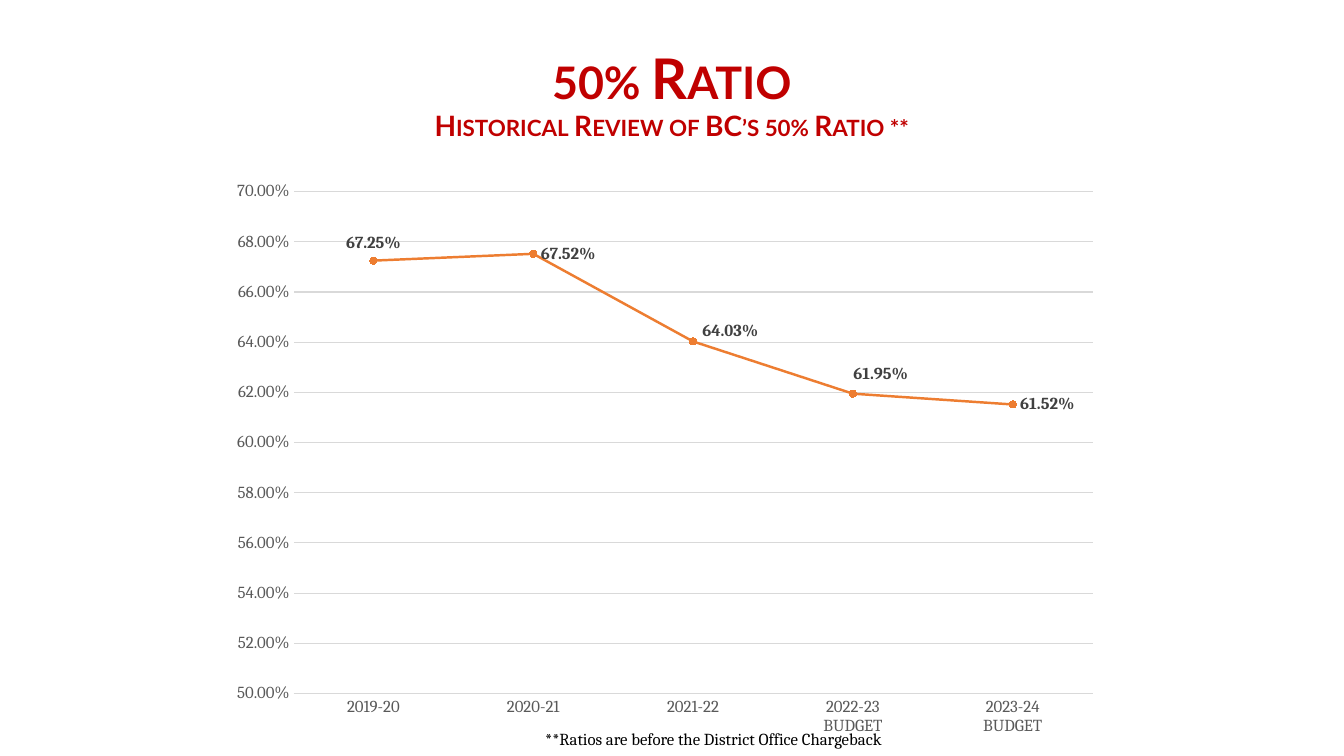
from lxml.etree import SubElement
from pptx import Presentation
from pptx.chart.data import CategoryChartData
from pptx.dml.color import RGBColor
from pptx.enum.chart import XL_CHART_TYPE, XL_LABEL_POSITION, XL_MARKER_STYLE, XL_TICK_MARK
from pptx.enum.text import MSO_ANCHOR, PP_ALIGN
from pptx.oxml import parse_xml
from pptx.oxml.ns import nsdecls, qn
from pptx.util import Cm, Pt

RED = RGBColor(0xC0, 0x00, 0x00)
BLACK = RGBColor(0x00, 0x00, 0x00)
DARK = RGBColor(0x40, 0x40, 0x40)
GREY = RGBColor(0x59, 0x59, 0x59)
PALE = RGBColor(0xD9, 0xD9, 0xD9)
ORANGE = RGBColor(0xED, 0x7D, 0x31)

RATIOS = {
    "2019-20": 0.6725,
    "2020-21": 0.6752,
    "2021-22": 0.6403,
    "2022-23\nBUDGET": 0.6195,
    "2023-24\nBUDGET": 0.6152,
}
# Label shifts from the right of a point, as shares of the chart
SHIFTS = {2: (0.002, -0.016), 3: (-0.008, -0.032)}
PERCENT = "0.00%"


def put(part, vals):
    for name, val in vals.items():
        setattr(part, name, val)


def style(font, size, color, face="Cambria", bold=False):
    put(font, {"size": Pt(size), "name": face, "bold": bold})
    font.color.rgb = color


def rule(line, color, width):
    line.color.rgb = color
    line.width = Pt(width)


def layout(tag, **vals):
    node = parse_xml(f"<c:layout {nsdecls('c')}/>")
    hand = SubElement(node, qn("c:manualLayout"))
    if tag:
        SubElement(hand, qn("c:layoutTarget")).set("val", tag)
        for mode in ("xMode", "yMode"):
            SubElement(hand, qn(f"c:{mode}")).set("val", "edge")
    for name, val in vals.items():
        SubElement(hand, qn(f"c:{name}")).set("val", str(val))
    return node


def text_box(slide, box, anchor):
    frame = slide.shapes.add_textbox(*map(Cm, box)).text_frame
    put(frame, {"word_wrap": True, "vertical_anchor": anchor})
    return frame.paragraphs[0]


def add_title(slide, box):
    para = text_box(slide, box, MSO_ANCHOR.MIDDLE)
    put(para, {"alignment": PP_ALIGN.CENTER, "line_spacing": 0.9})
    lines = [("50% Ratio", 40), ("Historical Review of BC’s 50% Ratio **", 20)]
    for num, (text, size) in enumerate(lines):
        if num:
            para.add_line_break()
        run = para.add_run()
        run.text = text
        style(run.font, size, RED, "Lato", True)
        run.font._element.set("cap", "small")


def add_note(slide, box):
    run = text_box(slide, box, MSO_ANCHOR.TOP).add_run()
    run.text = "**Ratios are before the District Office Chargeback"
    style(run.font, 12, BLACK)


def set_axes(chart):
    for axis in (chart.category_axis, chart.value_axis):
        put(axis, {"major_tick_mark": XL_TICK_MARK.NONE,
                   "minor_tick_mark": XL_TICK_MARK.NONE})
        style(axis.tick_labels.font, 12, GREY)
    rule(chart.category_axis.format.line, PALE, 0.75)
    axis = chart.value_axis
    put(axis, {"minimum_scale": 0.5, "maximum_scale": 0.7,
               "major_unit": 0.02, "has_major_gridlines": True})
    put(axis.tick_labels, {"number_format": PERCENT,
                           "number_format_is_linked": False})
    axis.format.line.fill.background()
    rule(axis.major_gridlines.format.line, PALE, 0.75)


def set_labels(series):
    labels = series.data_labels
    put(labels, {"show_value": True, "number_format": PERCENT,
                 "number_format_is_linked": False,
                 "position": XL_LABEL_POSITION.RIGHT})
    style(labels.font, 12, DARK, bold=True)
    for num in (0, *SHIFTS):
        label = series.points[num].data_label
        style(label.font, 12, DARK, bold=True)
        label.position = XL_LABEL_POSITION.RIGHT if num in SHIFTS else XL_LABEL_POSITION.ABOVE
    # Move single labels by hand
    for node in labels._element.findall(qn("c:dLbl")):
        idx = node.find(qn("c:idx"))
        num = int(idx.get("val"))
        if num in SHIFTS:
            x, y = SHIFTS[num]
            idx.addnext(layout(None, x=x, y=y))


def add_trend(slide, box):
    data = CategoryChartData(number_format=PERCENT)
    data.categories = list(RATIOS)
    data.add_series("Series 1", list(RATIOS.values()))
    chart = slide.shapes.add_chart(
        XL_CHART_TYPE.LINE_MARKERS, *map(Cm, box), data).chart
    put(chart, {"has_title": False, "has_legend": False})
    style(chart.font, 10, BLACK)
    set_axes(chart)

    # Line and markers
    plot = chart.plots[0]
    plot.vary_by_categories = False
    series = plot.series[0]
    series.smooth = False
    rule(series.format.line, ORANGE, 1.75)
    mark = series.marker
    put(mark, {"style": XL_MARKER_STYLE.CIRCLE, "size": 5})
    mark.format.fill.solid()
    mark.format.fill.fore_color.rgb = ORANGE
    rule(mark.format.line, ORANGE, 0.75)
    set_labels(series)

    # Inner plot area
    area = chart._chartSpace.find(".//" + qn("c:plotArea"))
    for old in area.findall(qn("c:layout")):
        area.remove(old)
    area.insert(0, layout("inner", x=0.071, y=0.116, w=0.906, h=0.811))


def main():
    deck = Presentation()
    put(deck, {"slide_width": Cm(33.87), "slide_height": Cm(19.05)})
    slide = deck.slides.add_slide(deck.slide_layouts[6])
    add_title(slide, (4.23, 1.27, 25.4, 2.34))
    add_note(slide, (13.49, 18.24, 16.51, 0.76))
    add_trend(slide, (5.82, 3.02, 22.23, 15.6))
    deck.save("out.pptx")


if __name__ == "__main__":
    main()
